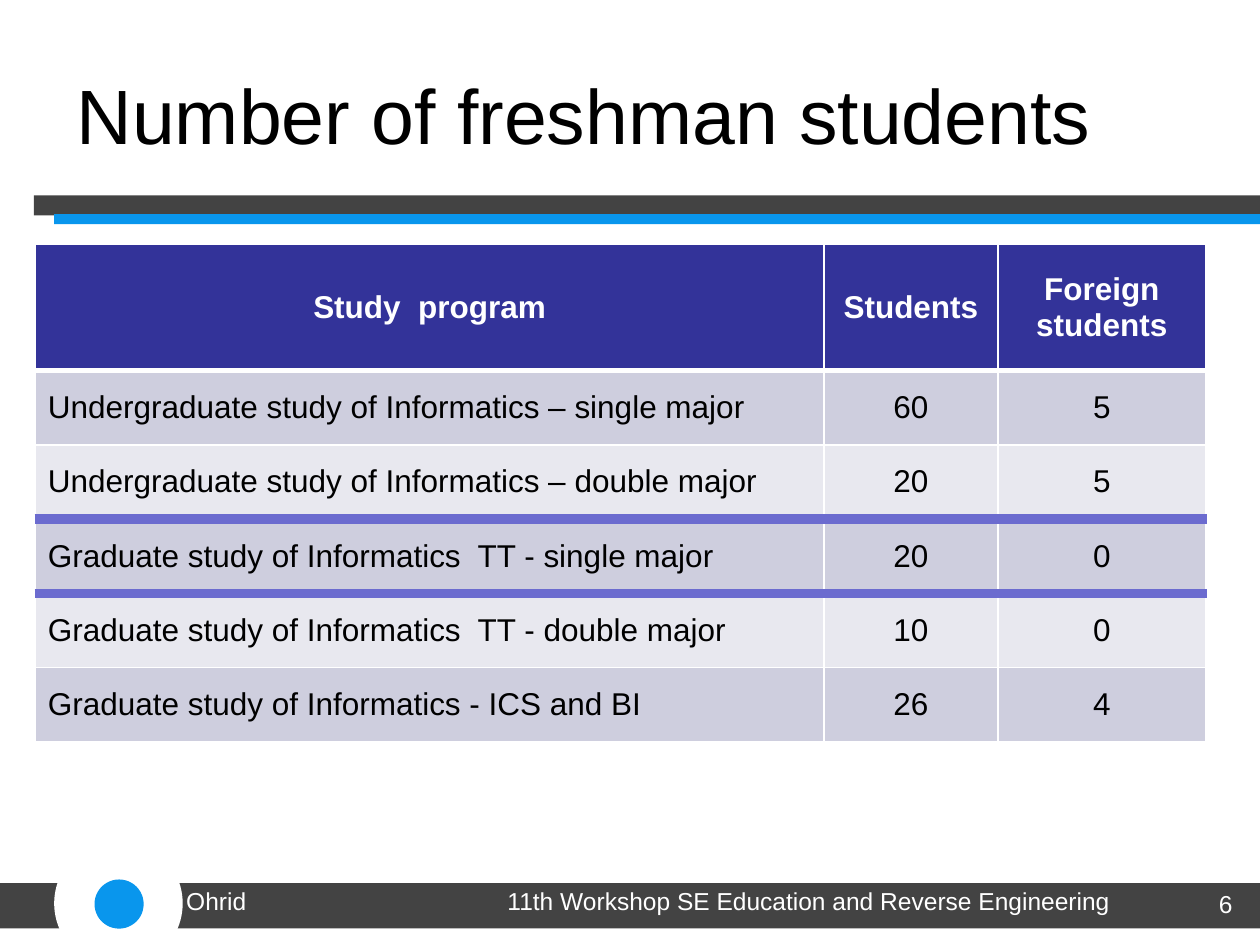
from lxml import etree
from pptx import Presentation
from pptx.dml.color import RGBColor
from pptx.enum.shapes import MSO_SHAPE
from pptx.enum.text import MSO_ANCHOR, PP_ALIGN
from pptx.oxml.ns import qn
from pptx.util import Inches, Pt

RECT, OVAL = MSO_SHAPE.RECTANGLE, MSO_SHAPE.OVAL
LEFT, CENTER, RIGHT = PP_ALIGN.LEFT, PP_ALIGN.CENTER, PP_ALIGN.RIGHT
TOP, MIDDLE = MSO_ANCHOR.TOP, MSO_ANCHOR.MIDDLE
FONT = "Arial"
COLORS = {
    "white": "FFFFFF", "black": "000000", "dark": "434343", "blue": "0996ED",
    "header": "333399", "odd": "CECEDE", "even": "E8E8EF", "divider": "6B6BCF",
}
ROWS = [
    ("Study  program", "Students", "Foreign students"),
    ("Undergraduate study of Informatics – single major", "60", "5"),
    ("Undergraduate study of Informatics – double major", "20", "5"),
    ("Graduate study of Informatics  TT - single major", "20", "0"),
    ("Graduate study of Informatics  TT - double major", "10", "0"),
    ("Graduate study of Informatics - ICS and BI", "26", "4"),
]
COL_WIDTHS = (6.26, 1.38, 1.65)
HEADER_HEIGHT, ROW_HEIGHT = 1.0, 0.59
RULES = {0: ("white", 3), 2: ("divider", 6), 3: ("divider", 6)}
THIN = ("white", 1)


def rgb(name):
    return RGBColor.from_string(COLORS[name])


def add_block(slide, kind, x, y, w, h, color):
    sp = slide.shapes.add_shape(kind, Inches(x), Inches(y), Inches(w), Inches(h))
    sp.shadow.inherit = False
    sp.fill.solid()
    sp.fill.fore_color.rgb = rgb(color)
    sp.line.fill.background()


def write(tf, text, size, color, align=LEFT, bold=False):
    tf.text = text
    p = tf.paragraphs[0]
    p.alignment = align
    font = p.runs[0].font
    font.name, font.size, font.bold = FONT, Pt(size), bold
    font.color.rgb = rgb(color)


def add_text(slide, x, y, w, h, text, size, color, align=LEFT, anchor=TOP):
    tf = slide.shapes.add_textbox(Inches(x), Inches(y), Inches(w), Inches(h)).text_frame
    tf.word_wrap = True
    tf.vertical_anchor = anchor
    write(tf, text, size, color, align)


def set_borders(cell, top, bottom):
    tcPr = cell._tc.get_or_add_tcPr()
    sides = (("L", THIN), ("R", THIN), ("T", top), ("B", bottom))
    for i, (side, (color, width)) in enumerate(sides):
        ln = etree.Element(qn(f"a:ln{side}"), w=str(Pt(width)))
        fill = etree.SubElement(ln, qn("a:solidFill"))
        etree.SubElement(fill, qn("a:srgbClr"), val=COLORS[color])
        tcPr.insert(i, ln)


def add_title(slide, x, y, w, h):
    add_text(slide, x, y, w, h, "Number of freshman students", 44, "black", anchor=MIDDLE)
    add_block(slide, RECT, 0.27, y + 1.27, 9.73, 0.16, "dark")
    add_block(slide, RECT, 0.43, y + 1.42, 9.57, 0.08, "blue")


def add_student_table(slide, x, y, w, h):
    table = slide.shapes.add_table(
        len(ROWS), len(COL_WIDTHS), Inches(x), Inches(y), Inches(w), Inches(h)).table
    for col, width in zip(table.columns, COL_WIDTHS):
        col.width = Inches(width)
    for i, values in enumerate(ROWS):
        header = i == 0
        table.rows[i].height = Inches(HEADER_HEIGHT if header else ROW_HEIGHT)
        fill = "header" if header else "odd" if i % 2 else "even"
        for j, value in enumerate(values):
            cell = table.cell(i, j)
            cell.vertical_anchor = MIDDLE
            cell.fill.solid()
            cell.fill.fore_color.rgb = rgb(fill)
            write(cell.text_frame, value, 18, "white" if header else "black",
                  CENTER if header or j else LEFT, header)
            set_borders(cell, RULES.get(i - 1, THIN), RULES.get(i, THIN))


def add_footer(slide, x, y, w, h):
    add_block(slide, RECT, x + 1.38, y, w - 1.38, h, "dark")
    add_block(slide, RECT, x, y, 0.51, h, "dark")
    add_block(slide, OVAL, x + 0.43, y - 0.35, 1.02, 1.02, "white")
    add_block(slide, OVAL, x + 0.75, y - 0.03, 0.39, 0.39, "blue")
    for left, top, width, text, align in (
        (1.38, -0.03, 2.76, "Ohrid", LEFT),
        (3.74, -0.03, 5.36, "11th Workshop SE Education and Reverse Engineering", CENTER),
        (9.33, 0, 0.55, "6", RIGHT),
    ):
        add_text(slide, x + left, y + top, width, 0.52, text, 14, "white", align)


def main():
    prs = Presentation()
    prs.slide_width, prs.slide_height = Inches(10), Inches(7.5)
    slide = prs.slides.add_slide(prs.slide_layouts[6])
    add_footer(slide, 0, 7.01, 10, 0.36)
    add_title(slide, 0.51, 0.28, 8.74, 1.25)
    add_student_table(slide, 0.28, 1.94, 9.29, 3.95)
    prs.save("out.pptx")


if __name__ == "__main__":
    main()
